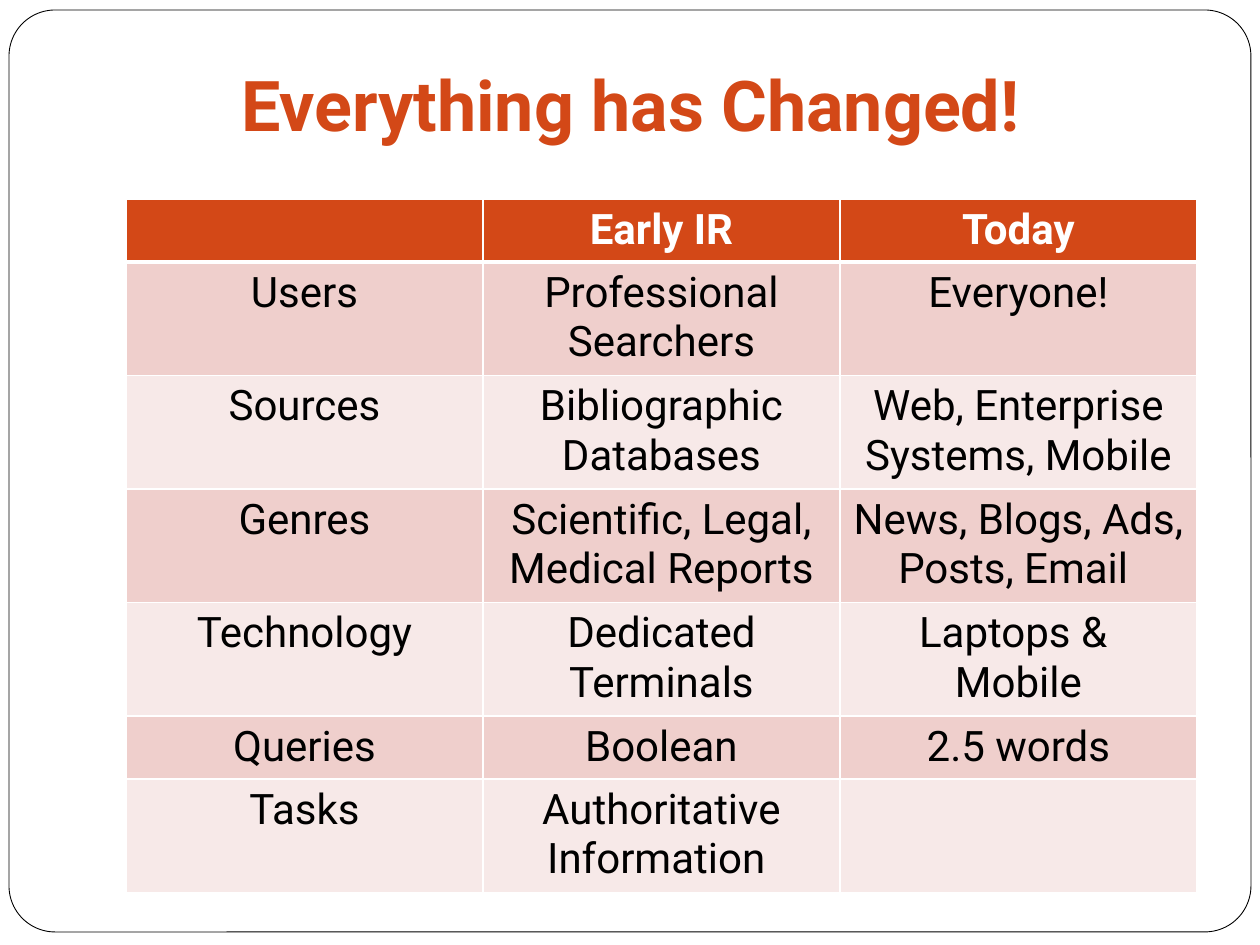
from dataclasses import dataclass

from lxml.etree import SubElement
from pptx import Presentation
from pptx.dml.color import RGBColor
from pptx.enum.shapes import MSO_SHAPE
from pptx.enum.text import MSO_ANCHOR, PP_ALIGN
from pptx.oxml.ns import qn
from pptx.util import Emu, Pt

PX = 914400 / 126
FONT = "Roboto"
ORANGE = RGBColor(0xD3, 0x48, 0x17)
DARK_BAND = RGBColor(0xEF, 0xCF, 0xCC)
LIGHT_BAND = RGBColor(0xF7, 0xE9, 0xE8)
WHITE = RGBColor(0xFF, 0xFF, 0xFF)
BLACK = RGBColor(0x00, 0x00, 0x00)


@dataclass(frozen=True)
class Row:
    topic: str
    early: str
    today: str
    height: int = 111


ROWS = [
    Row("", "Early IR", "Today", 61),
    Row("Users", "Professional Searchers", "Everyone!"),
    Row("Sources", "Bibliographic\nDatabases", "Web, Enterprise Systems, Mobile"),
    Row("Genres", "Scientific, Legal, Medical Reports", "News, Blogs, Ads, Posts, Email "),
    Row("Technology", "Dedicated Terminals", "Laptops & \nMobile"),
    Row("Queries", "Boolean", "2.5 words", 61),
    Row("Tasks", "Authoritative Information ", ""),
]


def px(n: int) -> Emu:
    return Emu(round(n * PX))


def write(tf, text: str, size: int, color: RGBColor, bold: bool) -> None:
    tf.text = text
    for p in tf.paragraphs:
        p.alignment = PP_ALIGN.CENTER
        for r in p.runs:
            r.font.name = FONT
            r.font.size = Pt(size)
            r.font.bold = bold
            r.font.color.rgb = color


def add_border(cell, side: str, width: int) -> None:
    ln = SubElement(cell._tc.get_or_add_tcPr(), qn(f"a:{side}"), w=str(Pt(width)))
    fill = SubElement(ln, qn("a:solidFill"))
    SubElement(fill, qn("a:srgbClr"), val=str(WHITE))


def add_frame(slide) -> None:
    sp = slide.shapes.add_shape(MSO_SHAPE.ROUNDED_RECTANGLE, px(9), px(10), px(1242), px(922))
    sp.adjustments[0] = 0.05
    sp.shadow.inherit = False
    sp.fill.solid()
    sp.fill.fore_color.rgb = WHITE
    sp.line.color.rgb = BLACK
    sp.line.width = Pt(0.5)


def add_title(slide, text: str) -> None:
    tf = slide.shapes.add_textbox(px(95), px(0), px(1071), px(158)).text_frame
    tf.word_wrap = True
    tf.vertical_anchor = MSO_ANCHOR.BOTTOM
    tf.margin_bottom = px(13)
    write(tf, text, 40, ORANGE, True)


def add_grid(slide, rows: list[Row]) -> None:
    height = sum(row.height for row in rows)
    table = slide.shapes.add_table(len(rows), 3, px(126), px(199), px(1071), px(height)).table
    table.horz_banding = False
    for col in table.columns:
        col.width = px(357)
    for i, row in enumerate(rows):
        header = i == 0
        band = ORANGE if header else DARK_BAND if i % 2 else LIGHT_BAND
        table.rows[i].height = px(row.height)
        for j, text in enumerate((row.topic, row.early, row.today)):
            cell = table.cell(i, j)
            write(cell.text_frame, text, 24, WHITE if header else BLACK, header)
            for side in ("lnL", "lnR"):
                add_border(cell, side, 1)
            add_border(cell, "lnT", 3 if i == 1 else 1)
            add_border(cell, "lnB", 3 if header else 1)
            cell.fill.solid()
            cell.fill.fore_color.rgb = band


def main() -> None:
    """Build the slide comparing early information retrieval with today."""
    prs = Presentation()
    prs.slide_width, prs.slide_height = px(1260), px(945)
    slide = prs.slides.add_slide(prs.slide_layouts[6])
    add_frame(slide)
    add_title(slide, "Everything has Changed!")
    add_grid(slide, ROWS)
    prs.save("out.pptx")


if __name__ == "__main__":
    main()
